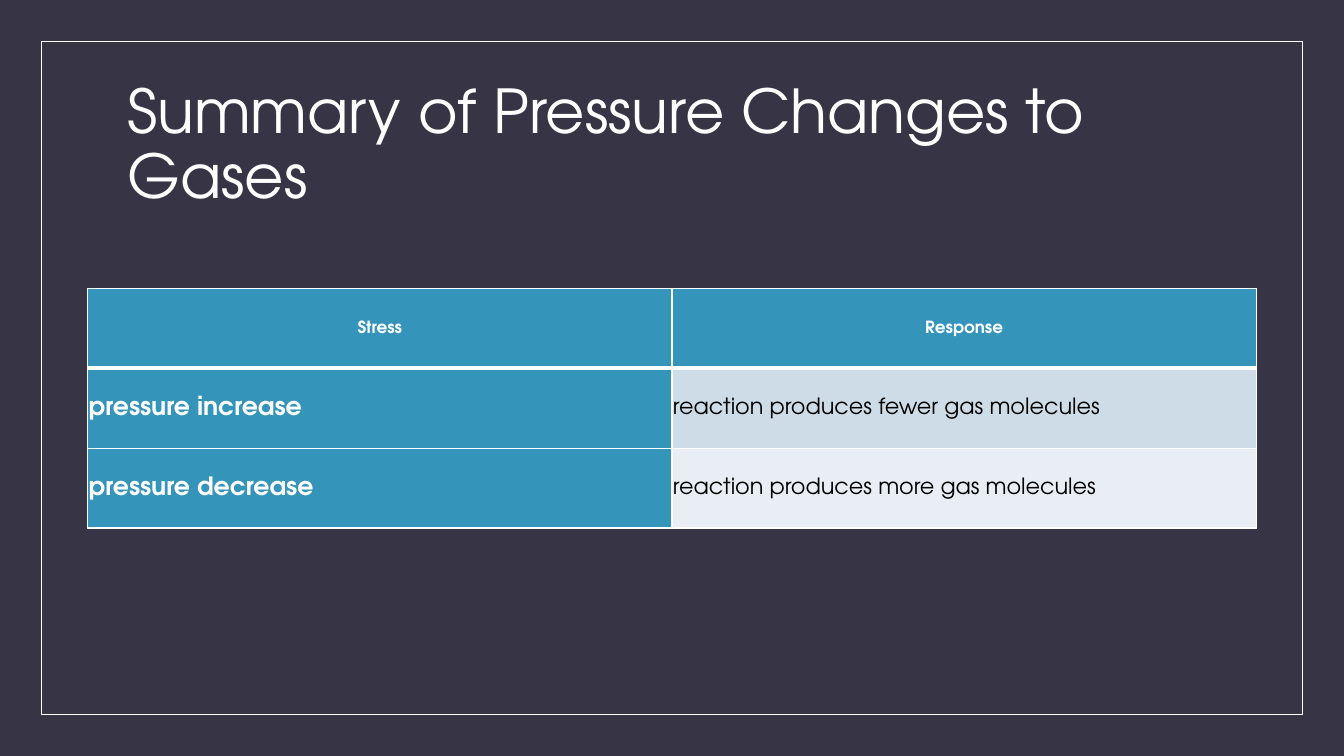
"""Builds a slide summarising how gases respond to pressure changes."""
from lxml import etree
from pptx import Presentation, util as u
from pptx.dml.color import RGBColor
from pptx.enum import shapes, text
from pptx.oxml.ns import qn

COLORS = {"bg": "373545", "white": "FFFFFF", "black": "000000",
          "teal": "3494BA", "band1": "CEDCE7", "band2": "E8EEF3"}
FONT = "TeX Gyre Adventor"
ROWS = [("Stress", "Response"),
        ("pressure increase", "reaction produces fewer gas molecules"),
        ("pressure decrease", "reaction produces more gas molecules")]
HEAD = {"size": 12, "bold": True, "color": "white"}
LABEL = {"size": 18, "bold": True, "color": "white"}
BODY = {"size": 16, "bold": False, "color": "black"}


def write(tf, words, fmt, spacing, align):
    tf.word_wrap = True
    p = tf.paragraphs[0]
    p.line_spacing, p.alignment = spacing, align
    r = p.add_run()
    r.text = words
    for name, value in {"name": FONT, "size": u.Pt(fmt["size"]), "bold": fmt["bold"]}.items():
        setattr(r.font, name, value)
    r.font.color.rgb = RGBColor.from_string(COLORS[fmt["color"]])


def border(cell, side, points):
    ln = etree.SubElement(cell._tc.get_or_add_tcPr(), qn(f"a:ln{side}"), w=str(u.Pt(points)))
    fill = etree.SubElement(ln, qn("a:solidFill"))
    etree.SubElement(fill, qn("a:srgbClr"), val=COLORS["white"])


prs = Presentation()
prs.slide_width, prs.slide_height = u.Inches(13.33), u.Inches(7.5)
W, H = prs.slide_width, prs.slide_height
s = prs.slides.add_slide(prs.slide_layouts[6])
s.background.fill.solid()
s.background.fill.fore_color.rgb = RGBColor.from_string(COLORS["bg"])

margin = u.Inches(0.41)
frame = s.shapes.add_shape(shapes.MSO_SHAPE.RECTANGLE, margin, margin,
                           W - 2 * margin, H - 2 * margin)
frame.shadow.inherit = False
frame.fill.background()
frame.line.color.rgb = RGBColor.from_string(COLORS["white"])
frame.line.width = u.Pt(0.5)

title_w = u.Inches(11)
title = s.shapes.add_textbox((W - title_w) // 2, u.Inches(0.7), title_w, H // 5)
title.text_frame.vertical_anchor = text.MSO_ANCHOR.MIDDLE
write(title.text_frame, "Summary of Pressure Changes to Gases",
      {"size": 43.2, "bold": False, "color": "white"}, 0.9, text.PP_ALIGN.LEFT)

col_w, row_h = u.Inches(5.795), u.Inches(0.793)
table = s.shapes.add_table(len(ROWS), 2, W // 2 - col_w, u.Inches(2.86),
                           2 * col_w, len(ROWS) * row_h).table
for i, row in enumerate(ROWS):
    for j, words in enumerate(row):
        cell = table.cell(i, j)
        for side in ("left", "top", "right", "bottom"):
            setattr(cell, f"margin_{side}", u.Inches(0.01))
        cell.vertical_anchor = text.MSO_ANCHOR.MIDDLE
        fmt = HEAD if i == 0 else (LABEL, BODY)[j]
        align = text.PP_ALIGN.CENTER if i == 0 else text.PP_ALIGN.LEFT
        write(cell.text_frame, words, fmt, 1.07, align)
        for side in "LRTB":
            border(cell, side, 3 if (i, side) in ((0, "B"), (1, "T")) else 1)
        cell.fill.solid()
        fill = f"band{i}" if i and j else "teal"
        cell.fill.fore_color.rgb = RGBColor.from_string(COLORS[fill])

prs.save("out.pptx")
